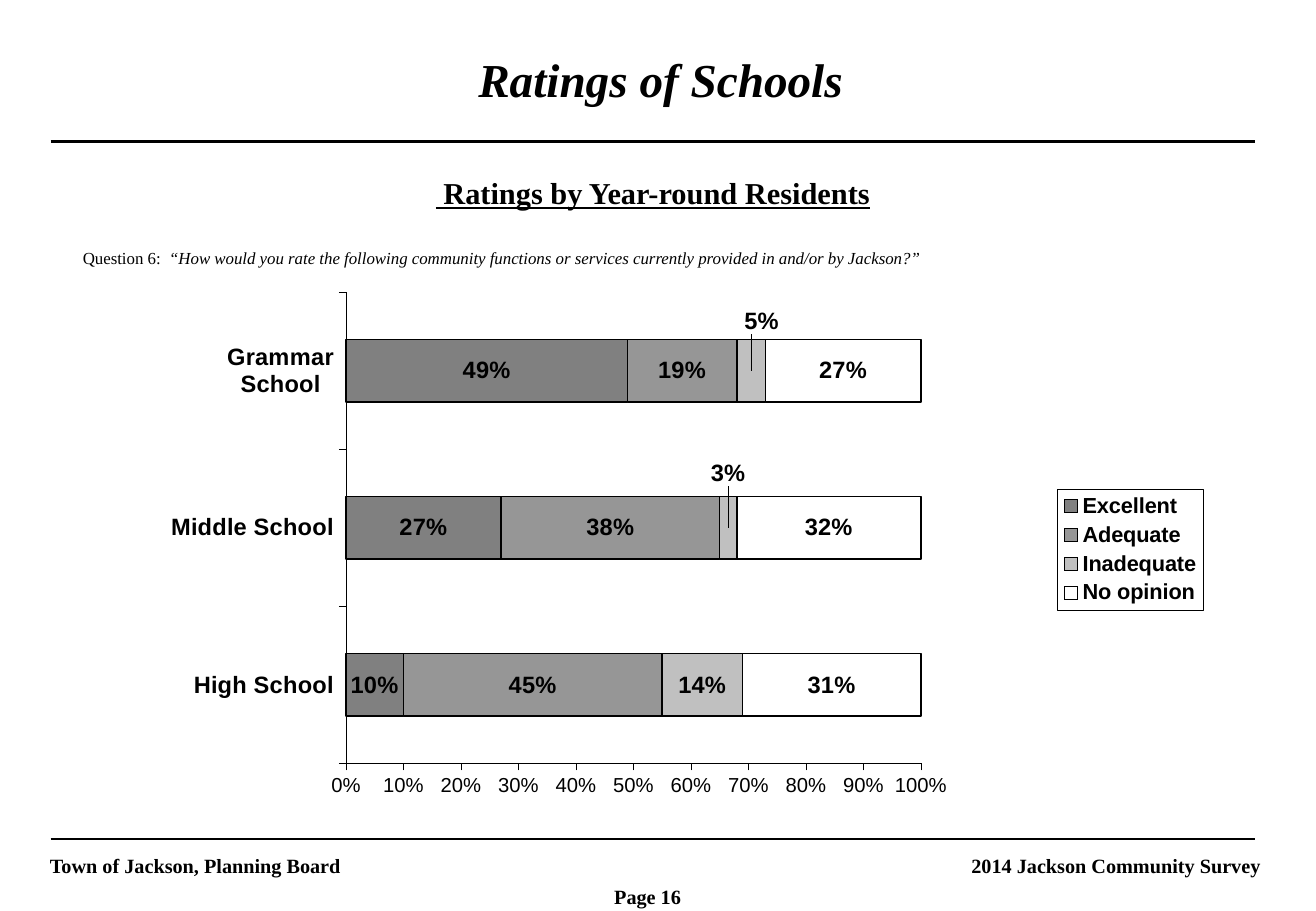
from lxml import etree
from pptx import Presentation
from pptx.chart.data import CategoryChartData
from pptx.dml.color import RGBColor
from pptx.enum.chart import XL_CHART_TYPE as ChartType
from pptx.enum.chart import XL_LEGEND_POSITION as LegendPosition
from pptx.enum.chart import XL_TICK_MARK as TickMark
from pptx.enum.shapes import MSO_CONNECTOR as Connector
from pptx.enum.text import MSO_ANCHOR as Anchor
from pptx.enum.text import MSO_AUTO_SIZE as AutoSize
from pptx.enum.text import PP_ALIGN as Align
from pptx.oxml import parse_xml
from pptx.oxml.ns import nsdecls, qn
from pptx.util import Emu, Pt

BLACK = "000000"
SERIF = "Times New Roman"
SANS = "Arial"
RULE_LEFT, RULE_RIGHT = 40, 992

SCHOOLS = ["High School", "Middle School", "Grammar School"]
# Rating, fill colour, share per school
RATINGS = [
    ("Excellent", "808080", (0.10, 0.27, 0.49)),
    ("Adequate", "969696", (0.45, 0.38, 0.19)),
    ("Inadequate", "C0C0C0", (0.14, 0.03, 0.05)),
    ("No opinion", "FFFFFF", (0.31, 0.32, 0.27)),
]
# Labels lifted above bars too narrow to hold them: school index -> offset
LIFTED_LABELS = {1: (0, -0.1), 2: (0.01, -0.09)}


def px(length):
    return Emu(length * 9525)


def color(hex_string):
    return RGBColor.from_string(hex_string)


def format_font(font, size, name=SERIF, bold=False, italic=False, underline=False):
    font.name = name
    font.size = Pt(size)
    font.bold = bold
    font.italic = italic
    font.underline = underline
    font.color.rgb = color(BLACK)


def write_text(shape, runs, align=Align.LEFT, **font_format):
    """Fill a shape with one paragraph of (text, format changes) runs."""
    frame = shape.text_frame
    frame.word_wrap = True
    frame.auto_size = AutoSize.NONE
    frame.vertical_anchor = Anchor.TOP
    paragraph = frame.paragraphs[0]
    paragraph.alignment = align
    paragraph.line_spacing = 0.9
    for text, changes in runs:
        run = paragraph.add_run()
        run.text = text
        format_font(run.font, **{**font_format, **changes})


def add_text(slide, box, runs, **text_format):
    if isinstance(runs, str):
        runs = [(runs, {})]
    shape = slide.shapes.add_textbox(*map(px, box))
    write_text(shape, runs, **text_format)


def add_title(slide, box, text, **text_format):
    title = slide.shapes.title
    title.left, title.top, title.width, title.height = map(px, box)
    write_text(title, [(text, {})], **text_format)


def add_rule(slide, y, width):
    ends = map(px, (RULE_LEFT, y, RULE_RIGHT, y))
    rule = slide.shapes.add_connector(Connector.STRAIGHT, *ends)
    rule.line.color.rgb = color(BLACK)
    rule.line.width = Pt(width)
    etree.SubElement(rule._element.spPr, qn("a:effectLst"))


def manual_layout(target="", **values):
    """Build a c:layout; x and y are edges for an inner target, else offsets."""
    parts = ""
    if target:
        parts = (f'<c:layoutTarget val="{target}"/>'
                 '<c:xMode val="edge"/><c:yMode val="edge"/>')
    parts += "".join(f'<c:{key} val="{value}"/>' for key, value in values.items())
    return parse_xml(f'<c:layout {nsdecls("c")}><c:manualLayout>{parts}'
                     '</c:manualLayout></c:layout>')


def format_axis(axis, size, bold):
    axis.has_major_gridlines = False
    axis.major_tick_mark = TickMark.OUTSIDE
    axis.minor_tick_mark = TickMark.NONE
    axis.format.line.color.rgb = color(BLACK)
    axis.format.line.width = Pt(0.25)
    format_font(axis.tick_labels.font, size, SANS, bold)


def format_series(series, fill):
    series.format.fill.solid()
    series.format.fill.fore_color.rgb = color(fill)
    series.format.line.color.rgb = color(BLACK)
    series.format.line.width = Pt(1)
    labels = series.data_labels
    labels.show_value = True
    labels.number_format = "0%"
    labels.number_format_is_linked = False
    format_font(labels.font, 14, SANS, bold=True)


def lift_labels(series):
    for index, (x, y) in LIFTED_LABELS.items():
        format_font(series.points[index].data_label.font, 14, SANS, bold=True)
    for label in series._element.iter(qn("c:dLbl")):
        index = label.find(qn("c:idx"))
        x, y = LIFTED_LABELS[int(index.get("val"))]
        index.addnext(manual_layout(x=x, y=y))


def format_legend(chart):
    chart.has_legend = True
    legend = chart.legend
    legend.position = LegendPosition.RIGHT
    legend.include_in_layout = False
    format_font(legend.font, 12.9, SANS, bold=True)
    frame = parse_xml(
        f'<c:spPr {nsdecls("c", "a")}>'
        '<a:solidFill><a:srgbClr val="FFFFFF"/></a:solidFill>'
        f'<a:ln w="3175"><a:solidFill><a:srgbClr val="{BLACK}"/></a:solidFill></a:ln>'
        '</c:spPr>')
    legend._element.find(qn("c:txPr")).addprevious(frame)


def add_ratings_chart(slide, box):
    data = CategoryChartData(number_format="0%")
    data.categories = SCHOOLS
    for name, fill, shares in RATINGS:
        data.add_series(name, shares)
    graphic = slide.shapes.add_chart(ChartType.BAR_STACKED_100, *map(px, box), data)
    chart = graphic.chart
    chart.has_title = False
    format_font(chart.font, 18, SANS, bold=True)

    # Bars and labels
    plot = chart.plots[0]
    plot.gap_width = 150
    plot.overlap = 100
    plot.vary_by_categories = False
    for series, (name, fill, shares) in zip(plot.series, RATINGS):
        format_series(series, fill)
    lift_labels(plot.series[2])

    # Axes
    format_axis(chart.category_axis, 14, bold=True)
    value_axis = chart.value_axis
    format_axis(value_axis, 12, bold=False)
    value_axis.minimum_scale = 0
    value_axis.maximum_scale = 1
    value_axis.major_unit = 0.1
    value_axis.tick_labels.number_format = "0%"
    value_axis.tick_labels.number_format_is_linked = False

    # Legend and plot area
    format_legend(chart)
    plot_area = chart._chartSpace.chart.plotArea
    for layout in plot_area.findall(qn("c:layout")):
        plot_area.remove(layout)
    plot_area.insert(0, manual_layout("inner", x=0.17, y=0.03, w=0.55, h=0.86))


def main():
    presentation = Presentation()
    presentation.slide_width, presentation.slide_height = px(1040), px(720)
    slide = presentation.slides.add_slide(presentation.slide_layouts[5])

    # Heading
    add_title(slide, (46, 40, 952, 50), "Ratings of Schools",
              align=Align.CENTER, size=28, bold=True, italic=True)
    add_rule(slide, 112, 2)
    add_text(slide, (40, 136, 952, 36), " Ratings by Year-round Residents",
             align=Align.CENTER, size=18, bold=True, underline=True)

    # Survey question and its results
    add_ratings_chart(slide, (133, 218, 826, 433))
    question = ("  “How would you rate the following community functions or services "
                "currently provided in and/or by Jackson?”")
    add_text(slide, (56, 193, 872, 24),
             [("Question 6:", {}), (question, {"italic": True})], size=10)

    # Footer
    add_rule(slide, 663, 1)
    add_text(slide, (30, 672, 376, 27), "Town of Jackson, Planning Board",
             size=12, bold=True)
    add_text(slide, (654, 672, 352, 27), "2014 Jackson Community Survey",
             align=Align.RIGHT, size=12, bold=True)
    add_text(slide, (476, 696, 88, 27), "Page 16", size=12, bold=True)

    presentation.save("out.pptx")


if __name__ == "__main__":
    main()
